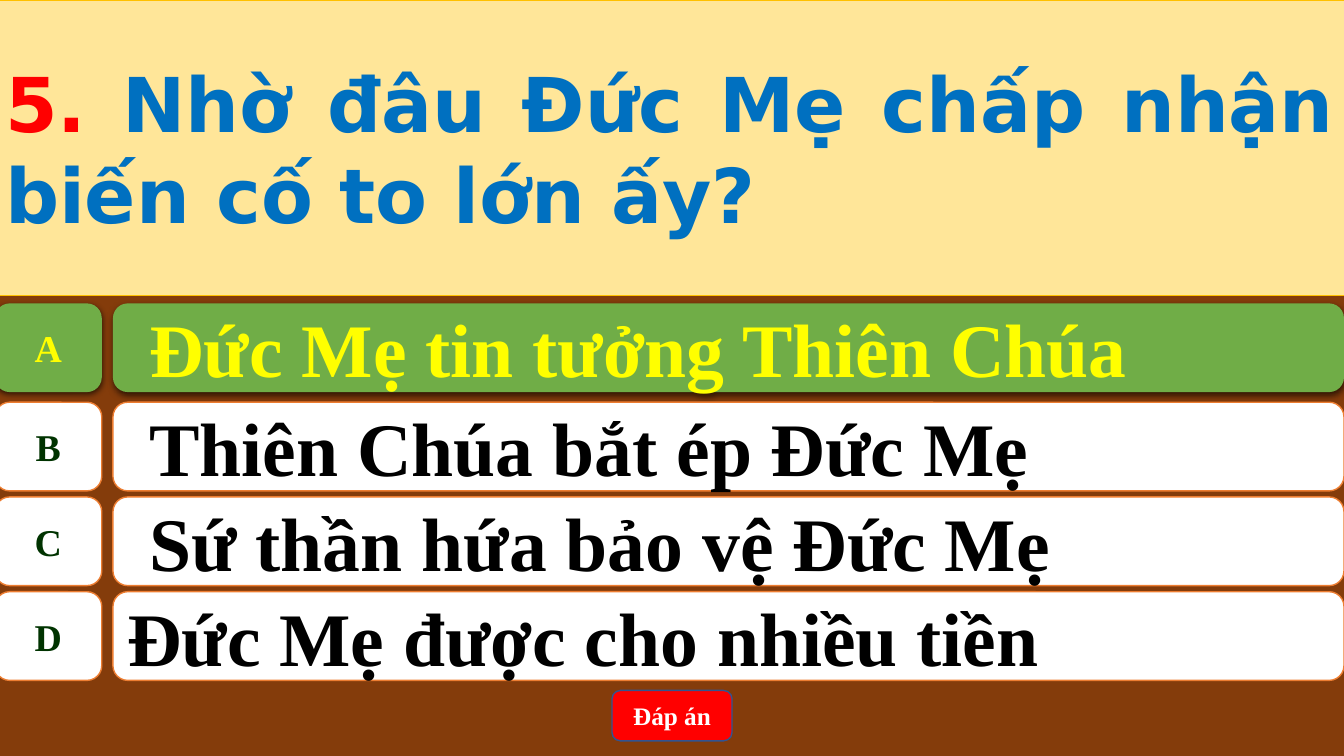
import pptx
import pptx.dml.color
import pptx.enum.shapes
import pptx.enum.text
import pptx.oxml.ns
import pptx.util
from lxml import etree

Inches = pptx.util.Inches
Pt = pptx.util.Pt
SHAPES = pptx.enum.shapes.MSO_SHAPE
ALIGN = pptx.enum.text.PP_ALIGN
MIDDLE = pptx.enum.text.MSO_ANCHOR.MIDDLE

COLORS = {
    "brown": "843C0B", "cream": "FFE699", "gold": "FFC000", "red": "FF0000",
    "blue": "0070C0", "white": "FFFFFF", "orange": "ED7D31", "green": "70AD47",
    "yellow": "FFFF00", "dark green": "003300", "black": "000000", "navy": "325491",
}
SERIF = "Times New Roman"
QUESTION_FONT = "DejaVu Sans"
# Letter, answer, whether it is indented, whether it is correct
ANSWERS = [
    ("A", "Đức Mẹ tin tưởng Thiên Chúa", True, True),
    ("B", "Thiên Chúa bắt ép Đức Mẹ", True, False),
    ("C", "Sứ thần hứa bảo vệ Đức Mẹ", True, False),
    ("D", "Đức Mẹ được cho nhiều tiền", False, False),
]


def rgb(name):
    return pptx.dml.color.RGBColor.from_string(COLORS[name])


def paint(shape, fill, line=None, width=1):
    shape.fill.solid()
    shape.fill.fore_color.rgb = rgb(fill)
    if line:
        shape.line.color.rgb = rgb(line)
        shape.line.width = Pt(width)
    else:
        shape.line.fill.background()


def add_drop_shadow(shape):
    effects = shape.element.spPr.find(pptx.oxml.ns.qn("a:effectLst"))
    shadow = etree.SubElement(
        effects, pptx.oxml.ns.qn("a:outerShdw"), blurRad=str(Pt(4.5)),
        dist=str(Pt(1.5)), dir="5400000", algn="ctr", rotWithShape="0")
    color = etree.SubElement(shadow, pptx.oxml.ns.qn("a:srgbClr"), val=COLORS["black"])
    etree.SubElement(color, pptx.oxml.ns.qn("a:alpha"), val="63000")


def add_label(slide, kind, box, text, size, color, fill, line, align):
    label = slide.shapes.add_shape(kind, *map(Inches, box))
    label.shadow.inherit = False
    paint(label, fill, line)
    label.text_frame.vertical_anchor = MIDDLE
    label.text_frame.word_wrap = True
    paragraph = label.text_frame.paragraphs[0]
    paragraph.text = text
    paragraph.alignment = align
    paragraph.font.name = SERIF
    paragraph.font.size = Pt(size)
    paragraph.font.bold = True
    paragraph.font.color.rgb = rgb(color)
    return label


def add_question(slide, box, number, wording):
    question = slide.shapes.title
    question.left, question.top, question.width, question.height = map(Inches, box)
    paint(question, "cream", "gold", 0.5)
    frame = question.text_frame
    frame.word_wrap = True
    frame.auto_size = pptx.enum.text.MSO_AUTO_SIZE.NONE
    frame.vertical_anchor = MIDDLE
    paragraph = frame.paragraphs[0]
    paragraph.alignment = ALIGN.JUSTIFY
    paragraph.line_spacing = 1.0
    paragraph.font.name = QUESTION_FONT
    paragraph.font.size = Pt(54)
    paragraph.font.bold = True
    for text, color in ((number, "red"), (wording, "blue")):
        run = paragraph.add_run()
        run.text = text
        run.font.color.rgb = rgb(color)


def add_answer(slide, box, letter, wording, indented, correct):
    left, top, width, height = box
    letter_width, gap = 1.06, 0.11
    fill, line = ("green", None) if correct else ("white", "orange")
    badge = add_label(
        slide, SHAPES.FLOWCHART_ALTERNATE_PROCESS, (left, top, letter_width, height),
        letter, 27, "yellow" if correct else "dark green", fill, line, ALIGN.CENTER)
    badge.text_frame.word_wrap = False
    offset = letter_width + gap
    answer = add_label(
        slide, SHAPES.ROUNDED_RECTANGLE, (left + offset, top, width - offset, height),
        wording, 54, "yellow" if correct else "black", fill, line, ALIGN.LEFT)
    if indented:
        paragraph = answer.text_frame.paragraphs[0]
        paragraph.level = 1
        properties = paragraph._p.get_or_add_pPr()
        properties.set("marL", str(Inches(0.5)))
        properties.set("indent", str(Inches(-0.28)))
    if correct:
        add_drop_shadow(badge)
        add_drop_shadow(answer)


def add_answers(slide, box):
    left, top, width, height = box
    pitch, row_height, lift = height / len(ANSWERS), 0.88, 0.04
    for row, (letter, wording, indented, correct) in enumerate(ANSWERS):
        # The correct answer is raised slightly
        row_top = top + row * pitch - (lift if correct else 0)
        add_answer(slide, (left, row_top, width, row_height),
                   letter, wording, indented, correct)


def main():
    deck = pptx.Presentation()
    deck.slide_width, deck.slide_height = Inches(13.33), Inches(7.5)
    slide = deck.slides.add_slide(deck.slide_layouts[5])
    slide.background.fill.solid()
    slide.background.fill.fore_color.rgb = rgb("brown")

    # Question
    add_question(slide, (-0.05, 0, 13.39, 2.93), "5. ",
                 "Nhờ đâu Đức Mẹ chấp nhận biến cố to lớn ấy?")
    # Answers
    add_answers(slide, (-0.05, 3.05, 13.38, 3.76))
    # Answer button
    add_label(slide, SHAPES.ROUNDED_RECTANGLE, (6.07, 6.85, 1.19, 0.5),
              "Đáp án", 18, "white", "red", "navy", ALIGN.CENTER)
    deck.save("out.pptx")


if __name__ == "__main__":
    main()
